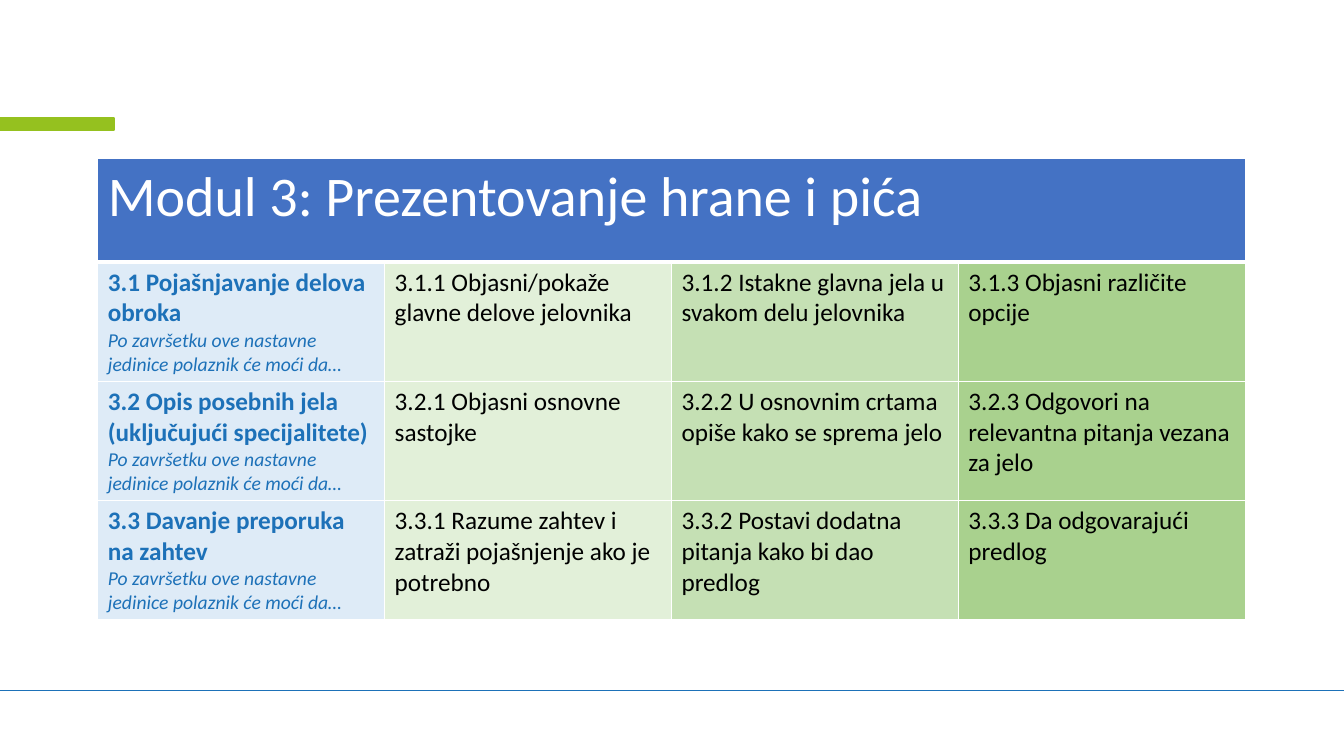
from dataclasses import dataclass

from lxml.etree import SubElement
from pptx import Presentation
from pptx.dml.color import RGBColor
from pptx.enum.shapes import MSO_CONNECTOR, MSO_SHAPE
from pptx.oxml.ns import qn
from pptx.util import Inches, Pt

COLORS = {
    "white": "FFFFFF",
    "black": "000000",
    "blue": "1D71B8",
    "lime": "95C11F",
    "header": "4472C4",
}
COLUMN_FILLS = ["DEEBF7", "E2F0D9", "C5E0B4", "A9D18E"]
FONT = "Calibri"
PAGE_WIDTH, PAGE_HEIGHT = 13.33, 7.5
TABLE_WIDTH, TABLE_HEIGHT = 11.38, 4.8
HEADER_HEIGHT, UNIT_HEIGHT = 1.03, 1.16
HEADING = "Modul 3: Prezentovanje hrane i pića"
LEAD_IN = "Po završetku ove nastavne jedinice polaznik će moći da…"


@dataclass
class Span:
    text: str
    size: int = 18
    color: str = COLORS["black"]
    bold: bool = False
    italic: bool = False


@dataclass
class Unit:
    title: str
    outcomes: list[str]


UNITS = [
    Unit("3.1 Pojašnjavanje delova obroka", [
        "3.1.1 Objasni/pokaže glavne delove jelovnika",
        "3.1.2 Istakne glavna jela u svakom delu jelovnika",
        "3.1.3 Objasni različite opcije",
    ]),
    Unit("3.2 Opis posebnih jela (uključujući specijalitete)", [
        "3.2.1 Objasni osnovne sastojke",
        "3.2.2 U osnovnim crtama opiše kako se sprema jelo",
        "3.2.3 Odgovori na relevantna pitanja vezana za jelo",
    ]),
    Unit("3.3 Davanje preporuka na zahtev", [
        "3.3.1 Razume zahtev i zatraži pojašnjenje ako je potrebno",
        "3.3.2 Postavi dodatna pitanja kako bi dao predlog",
        "3.3.3 Da odgovarajući predlog",
    ]),
]


def rgb(color: str) -> RGBColor:
    return RGBColor.from_string(color)


def set_borders(cell, bottom: int = 1) -> None:
    properties = cell._tc.get_or_add_tcPr()
    for side, points in (("L", 1), ("R", 1), ("T", 1), ("B", bottom)):
        border = SubElement(properties, qn(f"a:ln{side}"), w=str(Pt(points)))
        fill = SubElement(border, qn("a:solidFill"))
        SubElement(fill, qn("a:srgbClr"), val=COLORS["white"])


def fill_cell(cell, spans: list[Span], fill: str) -> None:
    """Write one paragraph per span on a plain fill."""
    cell.fill.solid()
    cell.fill.fore_color.rgb = rgb(fill)
    frame = cell.text_frame
    for index, span in enumerate(spans):
        para = frame.add_paragraph() if index else frame.paragraphs[0]
        run = para.add_run()
        run.text = span.text
        run.font.name = FONT
        run.font.size = Pt(span.size)
        run.font.bold = span.bold
        run.font.italic = span.italic
        run.font.color.rgb = rgb(span.color)


def add_decoration(page) -> None:
    # Footer rule
    rule = page.shapes.add_connector(
        MSO_CONNECTOR.STRAIGHT, 0, Inches(6.85), Inches(PAGE_WIDTH), Inches(6.85))
    rule.line.color.rgb = rgb(COLORS["blue"])
    rule.line.width = Pt(1)
    SubElement(rule._element.spPr, qn("a:effectLst"))

    # Accent bar at the left edge
    bar = page.shapes.add_shape(
        MSO_SHAPE.RECTANGLE, 0, Inches(1.17), Inches(1.13), Inches(0.12))
    bar.shadow.inherit = False
    bar.fill.solid()
    bar.fill.fore_color.rgb = rgb(COLORS["lime"])
    bar.line.color.rgb = rgb(COLORS["lime"])
    bar.line.width = Pt(1)


def add_module_table(page) -> None:
    columns = len(COLUMN_FILLS)
    box = page.shapes.add_table(
        len(UNITS) + 1, columns, Inches(0.97), Inches(1.57),
        Inches(TABLE_WIDTH), Inches(TABLE_HEIGHT))
    table = box.table
    for column in table.columns:
        column.width = Inches(TABLE_WIDTH / columns)
    for index, row in enumerate(table.rows):
        row.height = Inches(UNIT_HEIGHT if index else HEADER_HEIGHT)
        for cell in row.cells:
            set_borders(cell, bottom=1 if index else 3)
    box.height = Inches(TABLE_HEIGHT)

    # Heading across all columns
    heading = table.cell(0, 0)
    heading.merge(table.cell(0, columns - 1))
    fill_cell(heading, [Span(HEADING, 40, COLORS["white"])], COLORS["header"])

    # One row per teaching unit
    for row, unit in enumerate(UNITS, start=1):
        title = Span(unit.title, color=COLORS["blue"], bold=True)
        lead_in = Span(LEAD_IN, 14, COLORS["blue"], italic=True)
        contents = [[title, lead_in]] + [[Span(text)] for text in unit.outcomes]
        for column, (spans, fill) in enumerate(zip(contents, COLUMN_FILLS)):
            fill_cell(table.cell(row, column), spans, fill)


def main() -> None:
    deck = Presentation()
    deck.slide_width = Inches(PAGE_WIDTH)
    deck.slide_height = Inches(PAGE_HEIGHT)
    page = deck.slides.add_slide(deck.slide_layouts[6])
    add_decoration(page)
    add_module_table(page)
    deck.save("out.pptx")


if __name__ == "__main__":
    main()
